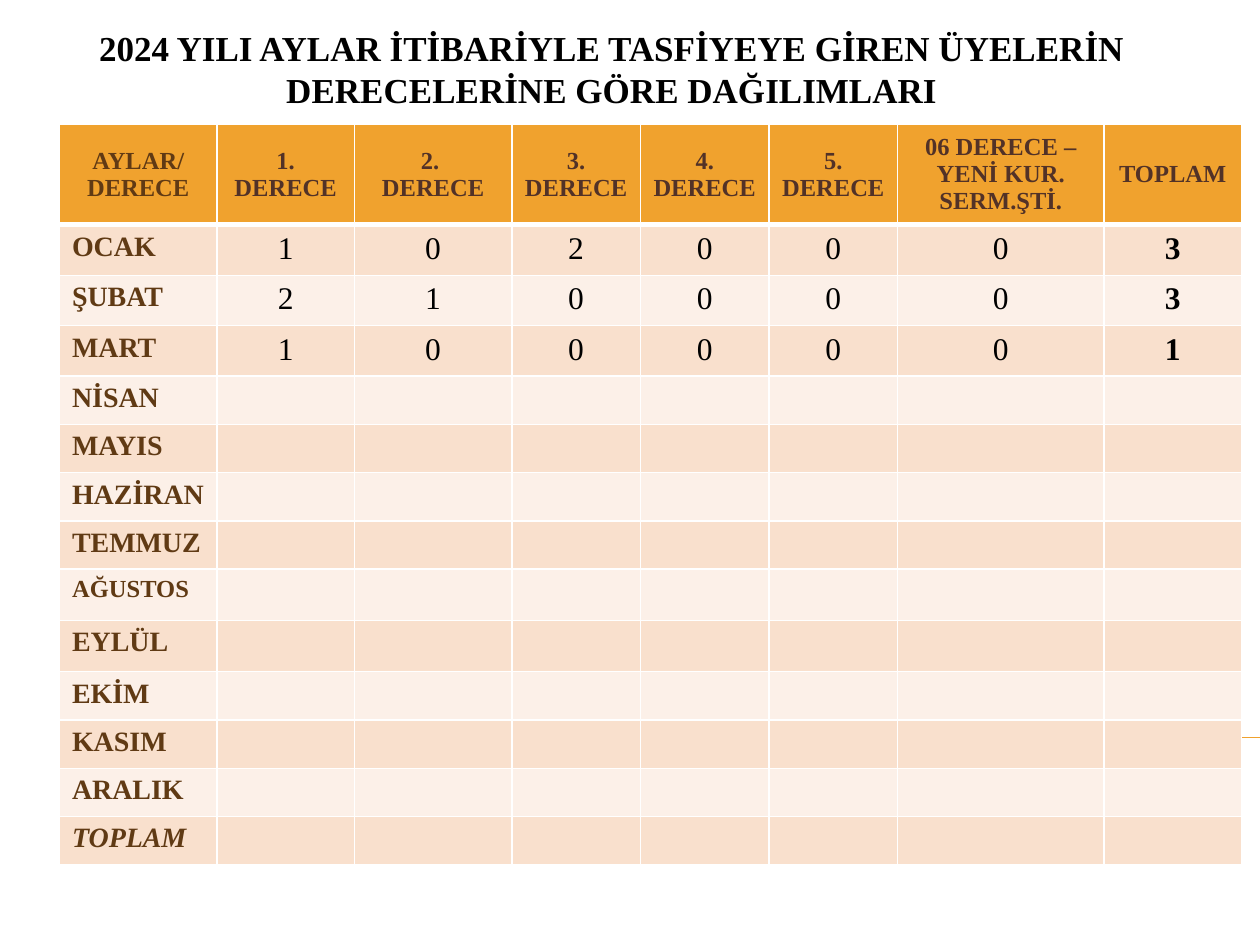
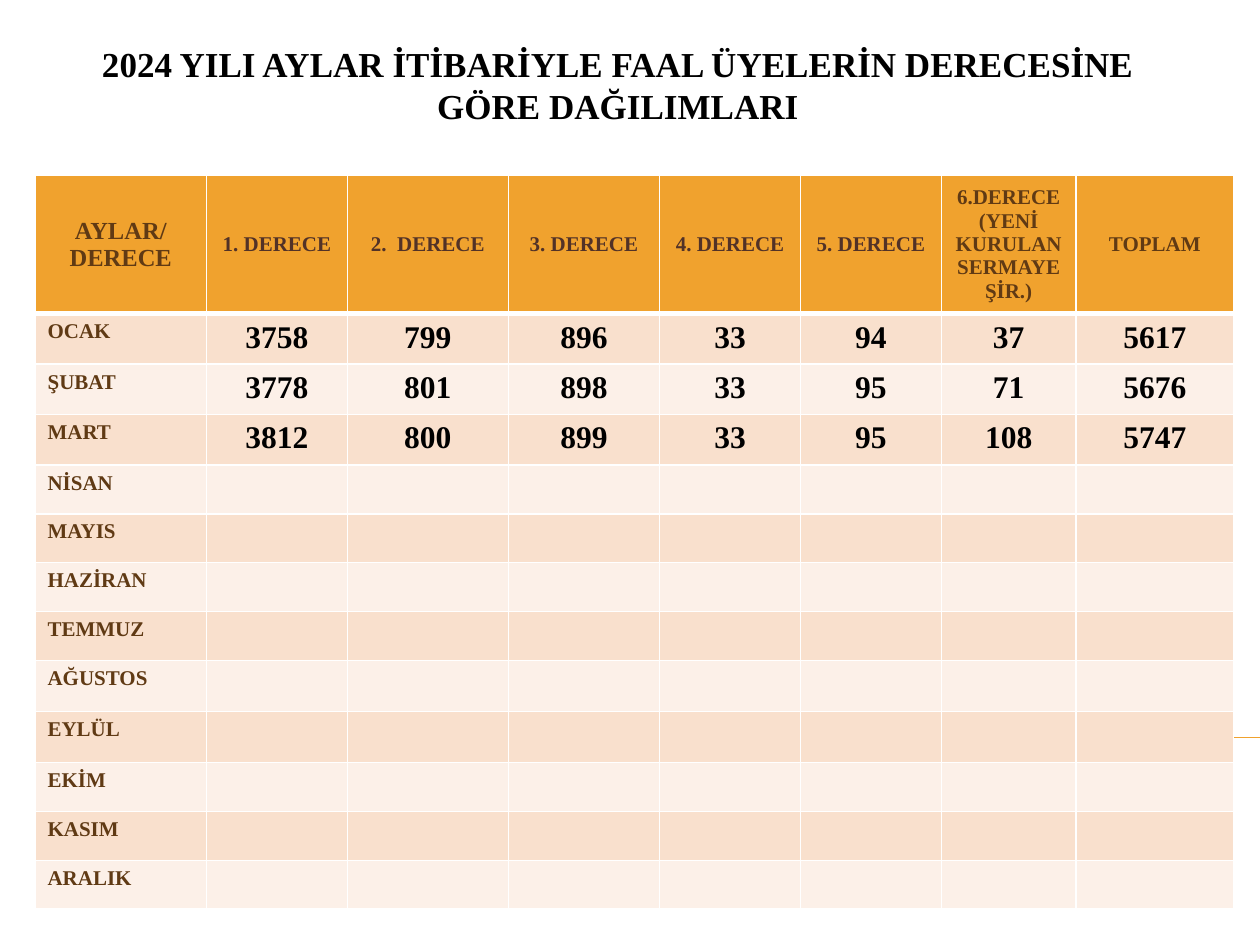
from lxml import etree
from pptx import Presentation
from pptx.dml.color import RGBColor
from pptx.enum.shapes import MSO_CONNECTOR
from pptx.enum.text import MSO_ANCHOR, PP_ALIGN
from pptx.oxml.ns import qn
from pptx.util import Pt

CENTER, LEFT = PP_ALIGN.CENTER, PP_ALIGN.LEFT
TOP, MIDDLE = MSO_ANCHOR.TOP, MSO_ANCHOR.MIDDLE
STRAIGHT = MSO_CONNECTOR.STRAIGHT

FONT = "Times New Roman"
COLORS = {
    "orange": "F0A22E",
    "band_dark": "F9E0CD",
    "band_light": "FCF0E8",
    "brown": "603A14",
    "dark_brown": "523227",
    "black": "000000",
    "white": "FFFFFF",
}
MONTHS = ["OCAK", "ŞUBAT", "MART", "NİSAN", "MAYIS", "HAZİRAN", "TEMMUZ",
          "AĞUSTOS", "EYLÜL", "EKİM", "KASIM", "ARALIK"]
TALL_ROWS = {"AĞUSTOS", "EYLÜL"}
TALL_HEIGHT = 29.3

LIQUIDATED = {
    "title": "2024 YILI AYLAR İTİBARİYLE TASFİYEYE GİREN ÜYELERİN "
             "DERECELERİNE GÖRE DAĞILIMLARI",
    "title_at": (16.5, 11.5),
    "table_at": (34, 70.8),
    "widths": [90, 78.5, 90, 73.5, 73.5, 73.5, 118, 78.5],
    "header_height": 54.6,
    "row_height": 27.6,
    "headers": ["AYLAR/ DERECE", "1.\nDERECE", "2.  DERECE", "3. DERECE",
                "4. DERECE", "5. DERECE", "06 DERECE – YENİ KUR. SERM.ŞTİ.",
                "TOPLAM"],
    "header_size": 14,
    "brown_headers": {0},
    "labels": MONTHS + ["TOPLAM"],
    "label_size": 16,
    "small_labels": {"AĞUSTOS": 14},
    "values": [[1, 0, 2, 0, 0, 0, 3], [2, 1, 0, 0, 0, 0, 3],
               [1, 0, 0, 0, 0, 0, 1]],
    "bold_from": 7,
}
ACTIVE = {
    "title": "2024 YILI AYLAR İTİBARİYLE FAAL ÜYELERİN DERECESİNE "
             "GÖRE DAĞILIMLARI",
    "title_at": (20, 21),
    "table_at": (20, 100),
    "widths": [98, 80.5, 92, 86.5, 80.5, 80.5, 77, 90],
    "header_height": 76.3,
    "row_height": 27.9,
    "headers": ["AYLAR/ DERECE", "1. DERECE", "2.  DERECE", "3. DERECE",
                "4. DERECE", "5. DERECE",
                "6.DERECE (YENİ KURULAN SERMAYE ŞİR.)", "TOPLAM"],
    "header_size": 12,
    "brown_headers": {0, 6, 7},
    "labels": MONTHS,
    "label_size": 12,
    "small_labels": {},
    "values": [[3758, 799, 896, 33, 94, 37, 5617],
               [3778, 801, 898, 33, 95, 71, 5676],
               [3812, 800, 899, 33, 95, 108, 5747]],
    "bold_from": 1,
}


def rgb(name):
    return RGBColor.from_string(COLORS[name])


def format_text(tf, size, color, align=CENTER, bold=True, italic=False):
    for p in tf.paragraphs:
        p.alignment = align
        for r in p.runs:
            r.font.name = FONT
            r.font.size = Pt(size)
            r.font.bold = bold
            r.font.italic = italic
            r.font.color.rgb = rgb(color)


def add_side_line(s):
    line = s.shapes.add_connector(STRAIGHT, Pt(40), Pt(421.5), Pt(720), Pt(421.5))
    line.line.color.rgb = rgb("orange")
    line.line.width = Pt(0.75)
    etree.SubElement(line._element.spPr, qn("a:effectLst"))


def add_title(s, text, left, top):
    tf = s.shapes.add_textbox(Pt(left), Pt(top), Pt(666), Pt(45.5)).text_frame
    tf.word_wrap = True
    tf.vertical_anchor = TOP
    tf.margin_left = tf.margin_right = Pt(12)
    tf.text = text
    tf.paragraphs[0].line_spacing = Pt(24)
    format_text(tf, 20, "black")


def set_borders(cell, top=1, bottom=1):
    """Draw white cell edges; they must come before the fill in tcPr."""
    tcPr = cell._tc.get_or_add_tcPr()
    edges = {"lnL": 1, "lnR": 1, "lnT": top, "lnB": bottom}
    for i, (tag, width) in enumerate(edges.items()):
        ln = etree.Element(qn(f"a:{tag}"), w=str(Pt(width)))
        fill = etree.SubElement(ln, qn("a:solidFill"))
        etree.SubElement(fill, qn("a:srgbClr"), val=COLORS["white"])
        tcPr.insert(i, ln)


def fill_cell(cell, color):
    cell.fill.solid()
    cell.fill.fore_color.rgb = rgb(color)


def shrink_empty(cell):
    """Keep an empty cell from stretching its row."""
    cell.text_frame.paragraphs[0]._p.get_or_add_endParaRPr().set("sz", "1200")


def fill_header(table, data):
    for col, text in enumerate(data["headers"]):
        cell = table.cell(0, col)
        cell.text_frame.text = text
        cell.vertical_anchor = MIDDLE
        size = 14 if col == 0 else data["header_size"]
        color = "brown" if col in data["brown_headers"] else "dark_brown"
        format_text(cell.text_frame, size, color)
        fill_cell(cell, "orange")
        set_borders(cell, bottom=3)


def fill_row(table, row, label, values, data):
    band = "band_dark" if row % 2 else "band_light"
    for col in range(len(data["widths"])):
        cell = table.cell(row, col)
        if col == 0:
            cell.text_frame.text = label
            cell.margin_right = Pt(4)
            size = data["small_labels"].get(label, data["label_size"])
            format_text(cell.text_frame, size, "brown", LEFT,
                        italic=label == "TOPLAM")
        elif values:
            cell.text_frame.text = str(values[col - 1])
            format_text(cell.text_frame, 18, "black",
                        bold=col >= data["bold_from"])
        else:
            shrink_empty(cell)
        fill_cell(cell, band)
        set_borders(cell, top=3 if row == 1 else 1)


def add_month_table(s, data):
    labels, widths = data["labels"], data["widths"]
    heights = [data["header_height"]] + [
        TALL_HEIGHT if label in TALL_ROWS else data["row_height"]
        for label in labels]
    left, top = data["table_at"]
    table = s.shapes.add_table(len(heights), len(widths), Pt(left), Pt(top),
                               Pt(sum(widths)), Pt(sum(heights))).table
    for column, width in zip(table.columns, widths):
        column.width = Pt(width)
    for row, height in zip(table.rows, heights):
        row.height = Pt(height)
    fill_header(table, data)
    for i, label in enumerate(labels):
        values = data["values"][i] if i < len(data["values"]) else None
        fill_row(table, i + 1, label, values, data)


def main():
    prs = Presentation()
    prs.slide_width, prs.slide_height = Pt(720), Pt(540)
    for data in (LIQUIDATED, ACTIVE):
        s = prs.slides.add_slide(prs.slide_layouts[6])
        add_side_line(s)
        add_title(s, data["title"], *data["title_at"])
        add_month_table(s, data)
    prs.save("out.pptx")


if __name__ == "__main__":
    main()
